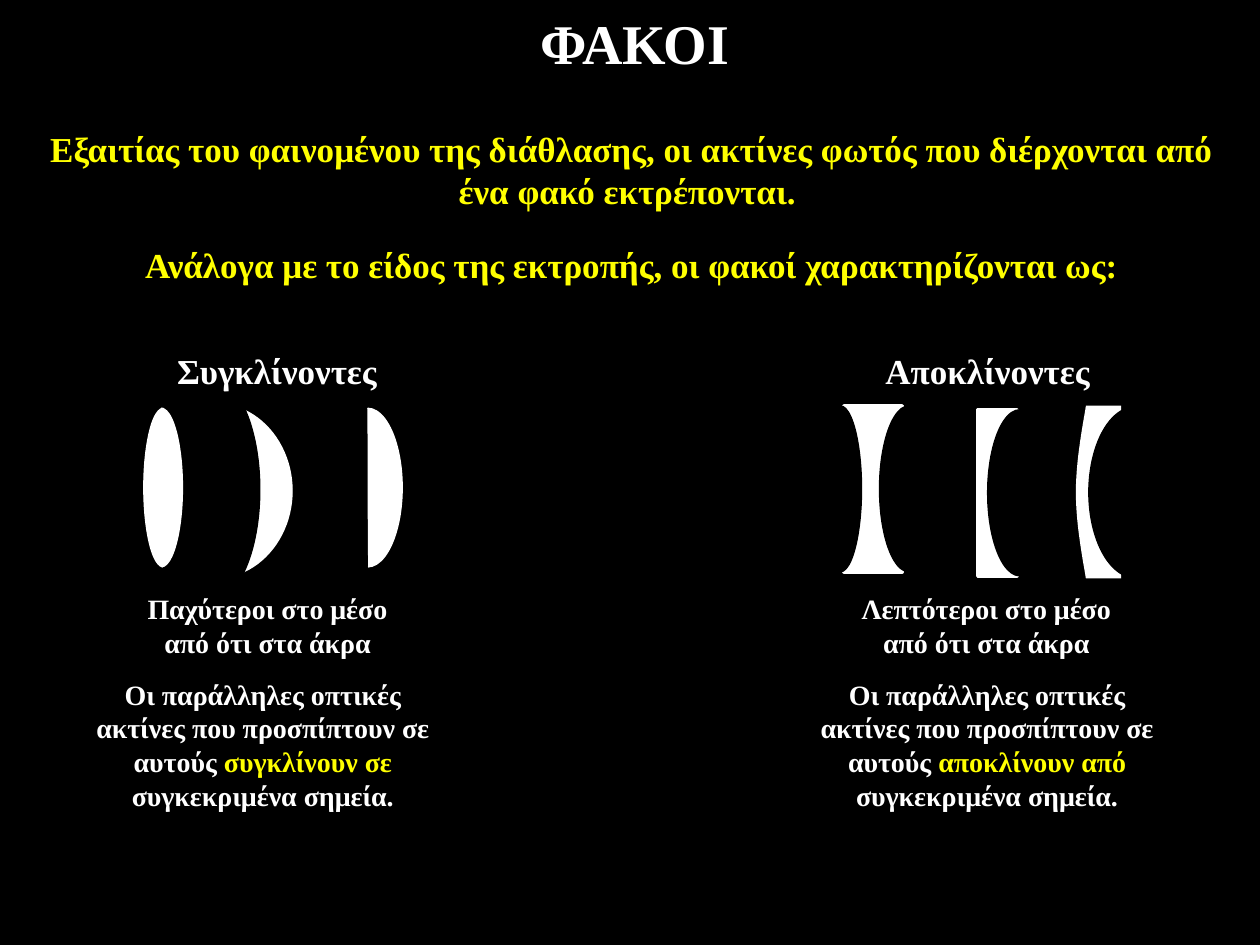
import dataclasses

import pptx
import pptx.dml.color
import pptx.enum.shapes
import pptx.enum.text
import pptx.oxml.ns
import pptx.util

Cm = pptx.util.Cm
SHAPES = pptx.enum.shapes.MSO_SHAPE


@dataclasses.dataclass(frozen=True)
class Theme:
    """Hold the colours, font and type sizes of the deck."""
    black: str = "000000"
    white: str = "FFFFFF"
    yellow: str = "FFFF00"
    font: str = "Times New Roman"
    title: int = 32
    lead: int = 20
    body: int = 16
    thin: float = 0.75
    thick: float = 2


THEME = Theme()


def colour(value):
    """Turn a hex value into a colour."""
    return pptx.dml.color.RGBColor.from_string(value)


def write(holder, pieces, size):
    """Fill a text holder with one centred bold paragraph of coloured pieces."""
    frame = holder.text_frame
    settings = {
        "word_wrap": True,
        "auto_size": pptx.enum.text.MSO_AUTO_SIZE.NONE,
        "vertical_anchor": pptx.enum.text.MSO_ANCHOR.TOP,
    }
    for name, value in settings.items():
        setattr(frame, name, value)
    para = frame.paragraphs[0]
    para.alignment = pptx.enum.text.PP_ALIGN.CENTER
    formats = {"name": THEME.font, "size": pptx.util.Pt(size), "bold": True}
    for words, shade in pieces:
        span = para.add_run()
        span.text = words
        for name, value in formats.items():
            setattr(span.font, name, value)
        span.font.color.rgb = colour(shade)


def add_text(shapes, box, pieces, size):
    """Add a text box at a box given in centimetres."""
    write(shapes.add_textbox(*map(Cm, box)), pieces, size)


def paint(shape, shade, width=None):
    """Give a shape one colour for its fill and optional line."""
    shape.shadow.inherit = False
    shape.fill.solid()
    shape.fill.fore_color.rgb = colour(shade)
    if width is None:
        shape.line.fill.background()
    else:
        shape.line.color.rgb = colour(shade)
        shape.line.width = pptx.util.Pt(width)


def add_arc(shapes, box, shade, flipped=False):
    """Add the right half of an ellipse, or its left half when flipped."""
    arc = shapes.add_shape(SHAPES.ARC, *map(Cm, box))
    arc.adjustments[0], arc.adjustments[1] = 162, 53.741
    if flipped:
        arc.element.spPr.find(pptx.oxml.ns.qn("a:xfrm")).set("flipH", "1")
    paint(arc, shade, THEME.thin)


def add_slab(shapes, box, width=None):
    """Add a white rectangle of glass."""
    paint(shapes.add_shape(SHAPES.RECTANGLE, *map(Cm, box)), THEME.white, width)


def add_bulge(shapes, right, top, depth, height, shade, steps=40):
    """Add a curve that bulges to the left of a vertical chord."""
    points = []
    for step in range(steps + 1):
        rise = 1 - abs(1 - 2 * step / steps)
        reach = depth * (1.5 * rise - 0.5 * rise ** 3)
        points.append((Cm(right - reach), Cm(top + height * step / steps)))
    builder = shapes.build_freeform(*points[0])
    builder.add_line_segments(points[1:], close=True)
    paint(builder.convert_to_shape(), shade)


def converging_lenses(shapes, left, top):
    """Draw the biconvex, meniscus and plano-convex lenses."""
    add_arc(shapes, (left + 1.52, top + 1.3, 0.86, 3.2), THEME.white)
    add_arc(shapes, (left + 1.6, top + 1.3, 0.79, 3.2), THEME.white, True)
    add_arc(shapes, (left + 1.44, top + 1.2, 3.15, 3.53), THEME.white)
    add_arc(shapes, (left + 1.98, top + 0.69, 1.96, 4.5), THEME.black)
    add_arc(shapes, (left + 5.41, top + 1.3, 1.4, 3.2), THEME.white)


def diverging_lenses(shapes, left, top):
    """Draw the biconcave, plano-concave and meniscus lenses."""
    add_slab(shapes, (left + 1.12, top + 1.25, 1.17, 3.35), THEME.thick)
    add_arc(shapes, (left + 0.61, top + 1.25, 0.86, 3.35), THEME.black)
    add_arc(shapes, (left + 1.83, top + 1.25, 1.19, 3.35), THEME.black, True)
    add_slab(shapes, (left + 3.81, top + 1.33, 0.79, 3.35), THEME.thick)
    add_arc(shapes, (left + 4.01, top + 1.33, 1.3, 3.35), THEME.black, True)
    add_slab(shapes, (left + 5.99, top + 1.25, 0.71, 3.48))
    add_bulge(shapes, left + 6.76, top + 1.27, 0.69, 3.45, THEME.black)
    add_bulge(shapes, left + 5.99, top + 1.27, 0.2, 3.45, THEME.white)
    add_arc(shapes, (left + 5.84, top + 1.27, 2.08, 3.45), THEME.black)
    add_arc(shapes, (left + 6.05, top + 1.27, 1.88, 3.45), THEME.black, True)


def add_header(page, box):
    """Place the title and the two introductory sentences."""
    left, top, width = box
    title = page.shapes.title
    places = {"left": left, "top": top, "width": width, "height": 1.68}
    for name, value in places.items():
        setattr(title, name, Cm(value))
    write(title, [("ΦΑΚΟΙ", THEME.white)], THEME.title)
    sentences = (
        (2.39, 1.88, "Εξαιτίας του φαινομένου της διάθλασης, οι ακτίνες φωτός "
                     "που διέρχονται από ένα φακό εκτρέπονται. "),
        (4.73, 1.14, "Ανάλογα με το είδος της εκτροπής, οι φακοί "
                     "χαρακτηρίζονται ως:"),
    )
    for offset, height, words in sentences:
        add_text(page.shapes, (left + 0.66, top + offset, width - 1.45, height),
                 [(words, THEME.yellow)], THEME.lead)


def add_family(page, box, draw, heading, trait, verb):
    """Place one family of lenses with its heading and descriptions."""
    left, top, width = box
    group = page.shapes.add_group_shape().shapes
    draw(group, left, top)
    for shapes, (words, inset, span), offset, height, size in (
            (group, heading, 0, 1.12, THEME.lead),
            (page.shapes, trait, 4.88, 1.63, THEME.body)):
        add_text(shapes, (left + inset, top + offset, span, height),
                 [(words, THEME.white)], size)
    add_text(page.shapes, (left, top + 6.6, width, 3), [
        ("Οι παράλληλες οπτικές ακτίνες που προσπίπτουν σε αυτούς ", THEME.white),
        (verb, THEME.yellow),
        ("συγκεκριμένα σημεία.", THEME.white),
    ], THEME.body)


def main():
    """Build and save the deck."""
    deck = pptx.Presentation()
    deck.slide_width, deck.slide_height = Cm(25.4), Cm(19.05)
    page = deck.slides.add_slide(deck.slide_layouts[5])
    page.background.fill.solid()
    page.background.fill.fore_color.rgb = colour(THEME.black)
    add_header(page, (0.1, 0.05, 25.4))
    add_family(page, (1.3, 6.93, 8), converging_lenses,
               ("Συγκλίνοντες", 2, 4.57),
               ("Παχύτεροι στο μέσο από ότι στα άκρα", 1.39, 5.41),
               "συγκλίνουν σε ")
    add_family(page, (15.9, 6.93, 8), diverging_lenses,
               ("Αποκλίνοντες", 1.42, 5.18),
               ("Λεπτότεροι στο μέσο από ότι στα άκρα", 1.19, 5.59),
               "αποκλίνουν από ")
    deck.save("out.pptx")


if __name__ == "__main__":
    main()
